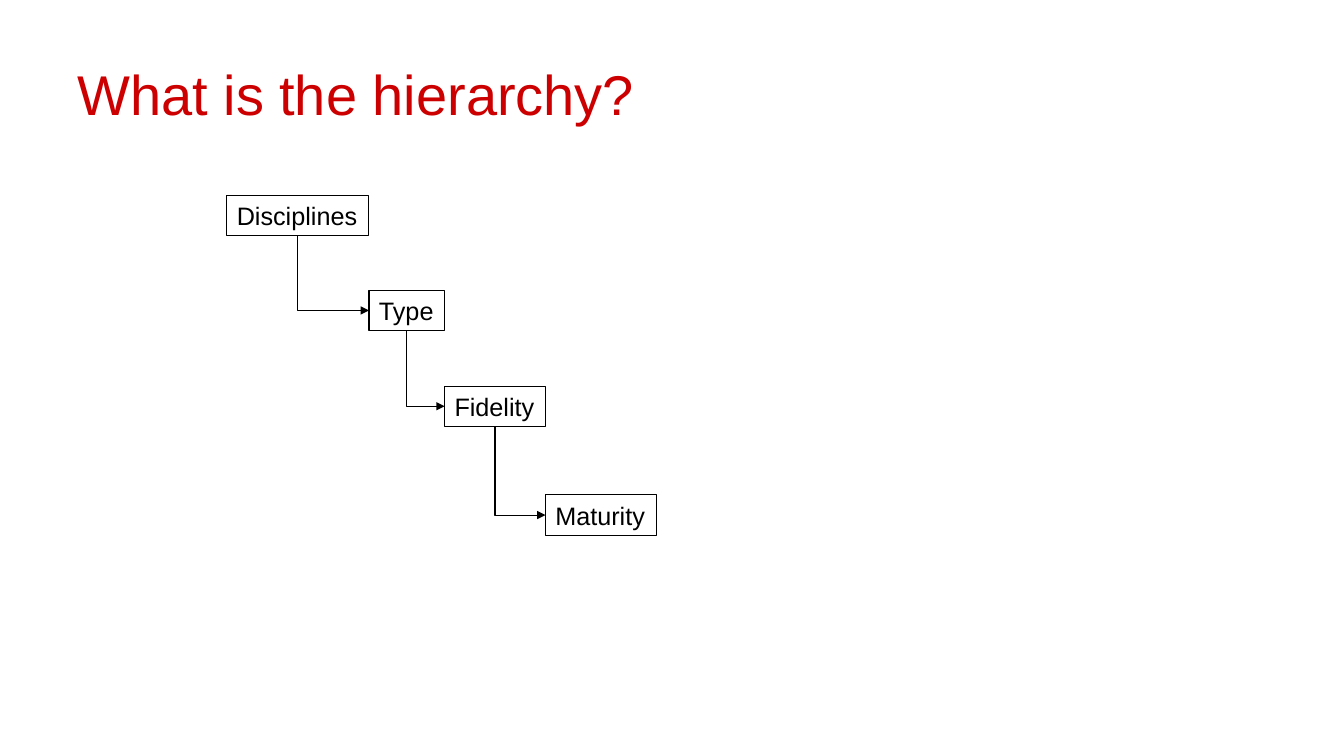
from lxml import etree
from pptx import Presentation
from pptx.dml.color import RGBColor
from pptx.enum.shapes import MSO_CONNECTOR, MSO_SHAPE
from pptx.enum.text import MSO_ANCHOR, MSO_AUTO_SIZE, PP_ALIGN
from pptx.oxml.ns import qn
from pptx.util import Inches, Pt

ELBOW = MSO_CONNECTOR.ELBOW
RECTANGLE = MSO_SHAPE.RECTANGLE
MIDDLE, TOP = MSO_ANCHOR.MIDDLE, MSO_ANCHOR.TOP
FIT_SHAPE = MSO_AUTO_SIZE.SHAPE_TO_FIT_TEXT
LEFT = PP_ALIGN.LEFT
BOTTOM_SIDE, LEFT_SIDE = 2, 1

RED = RGBColor(0xCC, 0x00, 0x00)
BLACK = RGBColor(0x00, 0x00, 0x00)

FIRST_LEFT = 2.25
BOX_HEIGHT = 0.4
# Label, top and width; each box starts where the one before it ends.
LEVELS = [
    ("Disciplines", 1.94, 1.41),
    ("Type", 2.88, 0.75),
    ("Fidelity", 3.83, 1.0),
    ("Maturity", 4.91, 1.1),
]


class HierarchySlide:
    font_name = "Arial"
    line_width = Pt(0.75)

    def __init__(self, slide):
        self.slide = slide

    def set_text(self, shape, text, size, color, anchor):
        frame = shape.text_frame
        frame.text = text
        frame.vertical_anchor = anchor
        paragraph = frame.paragraphs[0]
        paragraph.alignment = LEFT
        font = paragraph.runs[0].font
        font.name = self.font_name
        font.size = Pt(size)
        font.color.rgb = color

    def title(self, text, left, top, width, height):
        shape = self.slide.shapes.add_textbox(
            Inches(left), Inches(top), Inches(width), Inches(height))
        shape.text_frame.word_wrap = True
        self.set_text(shape, text, 40, RED, MIDDLE)

    def box(self, text, left, top, width):
        shape = self.slide.shapes.add_shape(
            RECTANGLE, Inches(left), Inches(top), Inches(width), Inches(BOX_HEIGHT))
        shape.shadow.inherit = False
        shape.fill.background()
        shape.line.color.rgb = BLACK
        shape.line.width = self.line_width
        shape.text_frame.word_wrap = False
        shape.text_frame.auto_size = FIT_SHAPE
        self.set_text(shape, text, 18, BLACK, TOP)
        return shape

    def step_arrow(self, parent, child):
        """Run down from the parent's bottom, then right into the child's left side."""
        connector = self.slide.shapes.add_connector(ELBOW, 0, 0, 0, 0)
        connector.begin_connect(parent, BOTTOM_SIDE)
        connector.end_connect(child, LEFT_SIDE)
        connector.line.color.rgb = BLACK
        connector.line.width = self.line_width

        # A single bend is a mirrored two-segment elbow turned by 270 degrees.
        across, down = connector.width, connector.height
        connector.left += (across - down) // 2
        connector.top += (down - across) // 2
        connector.width, connector.height = down, across
        properties = connector._element.spPr
        transform = properties.find(qn("a:xfrm"))
        transform.set("rot", str(270 * 60000))
        transform.set("flipH", "1")
        properties.find(qn("a:prstGeom")).set("prst", "bentConnector2")

        line = properties.find(qn("a:ln"))
        etree.SubElement(line, qn("a:tailEnd"), type="triangle")
        etree.SubElement(properties, qn("a:effectLst"))


def main():
    presentation = Presentation()
    presentation.slide_width = Inches(13.33)
    presentation.slide_height = Inches(7.5)
    blank_layout = presentation.slide_layouts[6]
    page = HierarchySlide(presentation.slides.add_slide(blank_layout))

    page.title("What is the hierarchy?", 0.67, 0.3, 12, 1.25)

    boxes = []
    left = FIRST_LEFT
    for label, top, width in LEVELS:
        boxes.append(page.box(label, left, top, width))
        left += width
    for parent, child in zip(boxes, boxes[1:]):
        page.step_arrow(parent, child)

    presentation.save("out.pptx")


if __name__ == "__main__":
    main()
